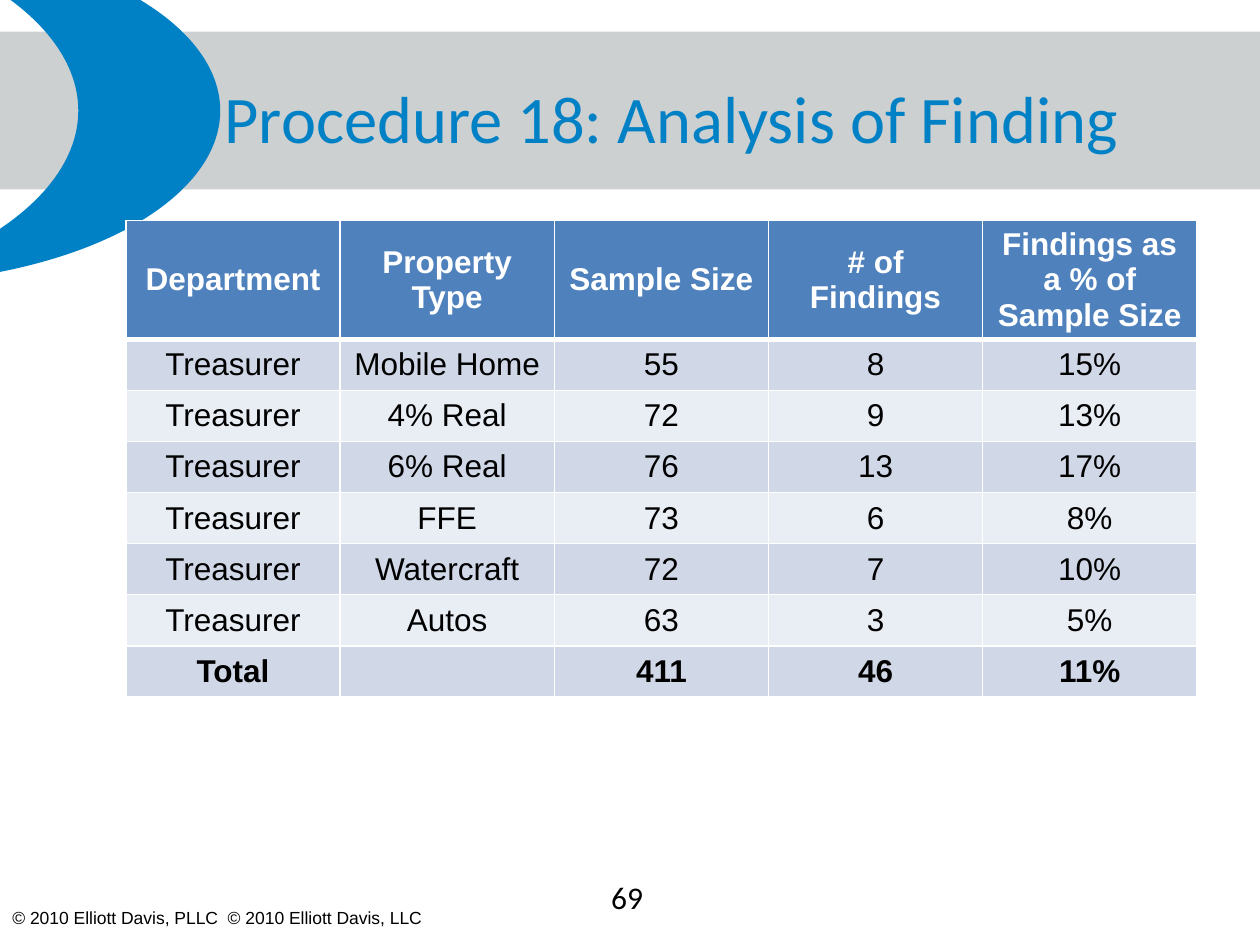
import pptx
import pptx.dml.color
import pptx.enum.shapes
import pptx.enum.text
import pptx.util
from lxml import etree
from pptx.oxml.ns import qn

Cm = pptx.util.Cm
Pt = pptx.util.Pt
Shape = pptx.enum.shapes.MSO_SHAPE
Align = pptx.enum.text.PP_ALIGN
Anchor = pptx.enum.text.MSO_ANCHOR

HUES = {
    "blue": "0081C6",
    "grey": "C8CBCB",
    "head": "4F81BD",
    "odd": "D0D8E8",
    "even": "E9EDF4",
    "white": "FFFFFF",
    "black": "000000",
}
ROWS = [
    ["Department", "Property Type", "Sample Size", "# of Findings",
     "Findings as a % of Sample Size"],
    ["Treasurer", "Mobile Home", "55", "8", "15%"],
    ["Treasurer", "4% Real", "72", "9", "13%"],
    ["Treasurer", "6% Real", "76", "13", "17%"],
    ["Treasurer", "FFE", "73", "6", "8%"],
    ["Treasurer", "Watercraft", "72", "7", "10%"],
    ["Treasurer", "Autos", "63", "3", "5%"],
    ["Total", "", "411", "46", "11%"],
]


def paint(fill, hue):
    fill.solid()
    fill.fore_color.rgb = pptx.dml.color.RGBColor.from_string(HUES[hue])


def write(frame, text, size=18, font="Arial", hue="black", bold=False,
          align=Align.LEFT, anchor=Anchor.TOP):
    frame.word_wrap = True
    frame.vertical_anchor = anchor
    para = frame.paragraphs[0]
    para.alignment = align
    run = para.add_run()
    run.text = text
    run.font.size = Pt(size)
    run.font.name = font
    run.font.bold = bold
    run.font.color.rgb = pptx.dml.color.RGBColor.from_string(HUES[hue])


def add_form(slide, kind, box, hue):
    form = slide.shapes.add_shape(kind, *map(Cm, box))
    form.shadow.inherit = False
    form.line.fill.background()
    paint(form.fill, hue)
    return form


def add_note(slide, box, text, **style):
    note = slide.shapes.add_textbox(*map(Cm, box))
    write(note.text_frame, text, **style)


def add_banner(slide, left, top, width, height):
    """Draw the grey band with the crescent over its left end."""
    band = add_form(slide, Shape.RECTANGLE, (left, top, width, height), "grey")
    tint = band.fill._xPr.find(".//" + qn("a:srgbClr"))
    etree.SubElement(tint, qn("a:alpha"), val="90000")
    moon = add_form(slide, Shape.MOON,
                    (left - 2.54, top - 1.9, 6.98, 6.98), "blue")
    moon.rotation = 180
    moon.adjustments[0] = 0.41


def add_title(slide, left, top, width, height, text):
    title = slide.shapes.title
    title.left, title.top = Cm(left), Cm(top)
    title.width, title.height = Cm(width), Cm(height)
    write(title.text_frame, text, size=38, font="Calibri", hue="blue",
          align=Align.CENTER, anchor=Anchor.MIDDLE)
    slide.shapes._spTree.append(title._element)  # bring to front


def rule(cell, **sides):
    """Give white borders; each side (L, R, T, B) has a width in points."""
    props = cell._tc.get_or_add_tcPr()
    for side, size in sides.items():
        line = etree.SubElement(props, qn("a:ln" + side), w=str(Pt(size)))
        solid = etree.SubElement(line, qn("a:solidFill"))
        etree.SubElement(solid, qn("a:srgbClr"), val=HUES["white"])


def add_grid(slide, left, top, width, head, step):
    """Fill the table; head is the first row's height, step the others'."""
    count = len(ROWS[0])
    tall = head + step * (len(ROWS) - 1)
    grid = slide.shapes.add_table(
        len(ROWS), count, Cm(left), Cm(top), Cm(width), Cm(tall)).table
    for col in grid.columns:
        col.width = Cm(width / count)
    for i, row in enumerate(ROWS):
        grid.rows[i].height = Cm(step if i else head)
        back = "head" if i == 0 else "odd" if i % 2 else "even"
        for j, text in enumerate(row):
            cell = grid.cell(i, j)
            rule(cell, L=1, R=1, T=3 if i == 1 else 1, B=1 if i else 3)
            paint(cell.fill, back)
            cell.vertical_anchor = Anchor.MIDDLE
            if text:
                write(cell.text_frame, text, align=Align.CENTER,
                      anchor=None, hue="black" if i else "white",
                      bold=i in (0, len(ROWS) - 1))


def main():
    deck = pptx.Presentation()
    deck.slide_width, deck.slide_height = Cm(25.4), Cm(19.05)
    slide = deck.slides.add_slide(deck.slide_layouts[5])
    add_banner(slide, 0, 0.64, 25.4, 3.18)
    add_note(slide, (0, 18.16, 9.1, 0.69),
             "© 2010 Elliott Davis, PLLC\u00a0 © 2010 Elliott Davis, LLC".replace("\u00a0", " "),
             size=10)
    add_title(slide, 2.11, 0.76, 22.86, 3.18,
              "Procedure 18: Analysis of Finding")
    add_grid(slide, 2.54, 4.45, 21.59, 2.38, 1.03)
    add_note(slide, (12.07, 17.58, 1.27, 1.02), "69", font="Calibri")
    deck.save("out.pptx")


if __name__ == "__main__":
    main()
